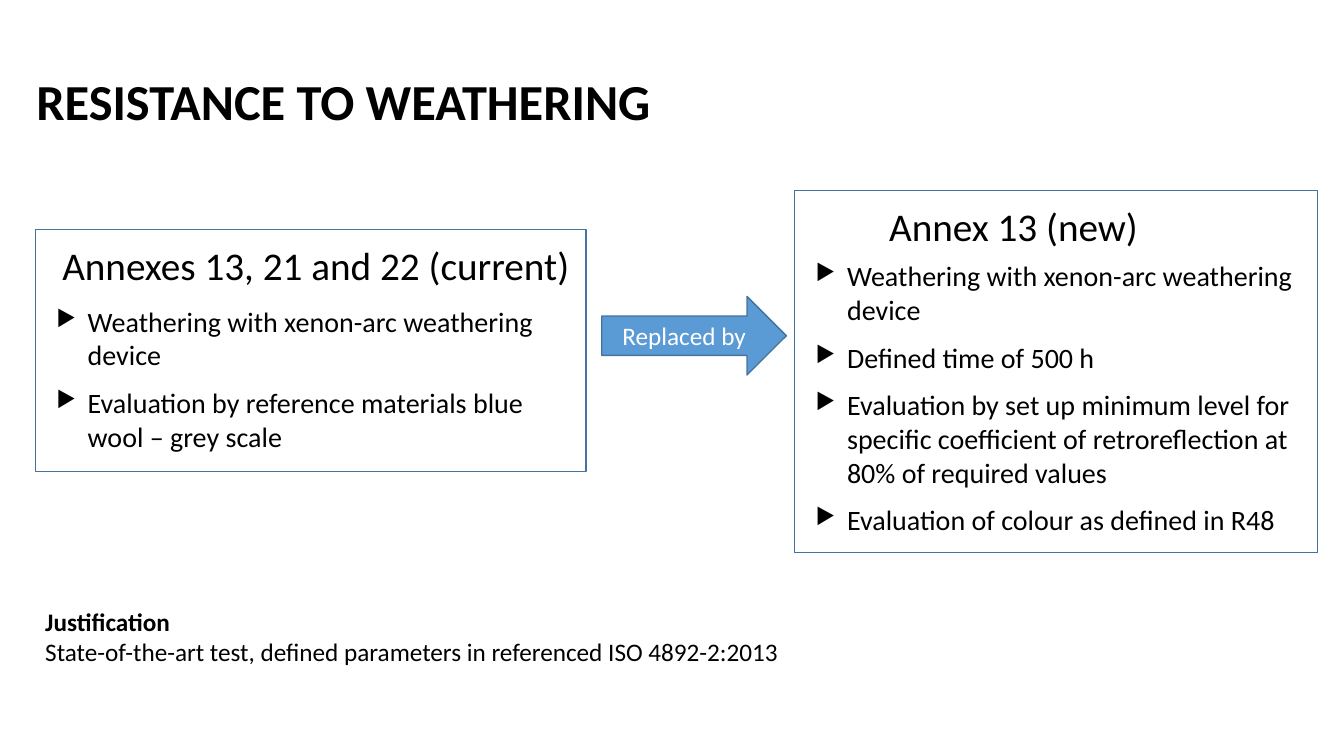
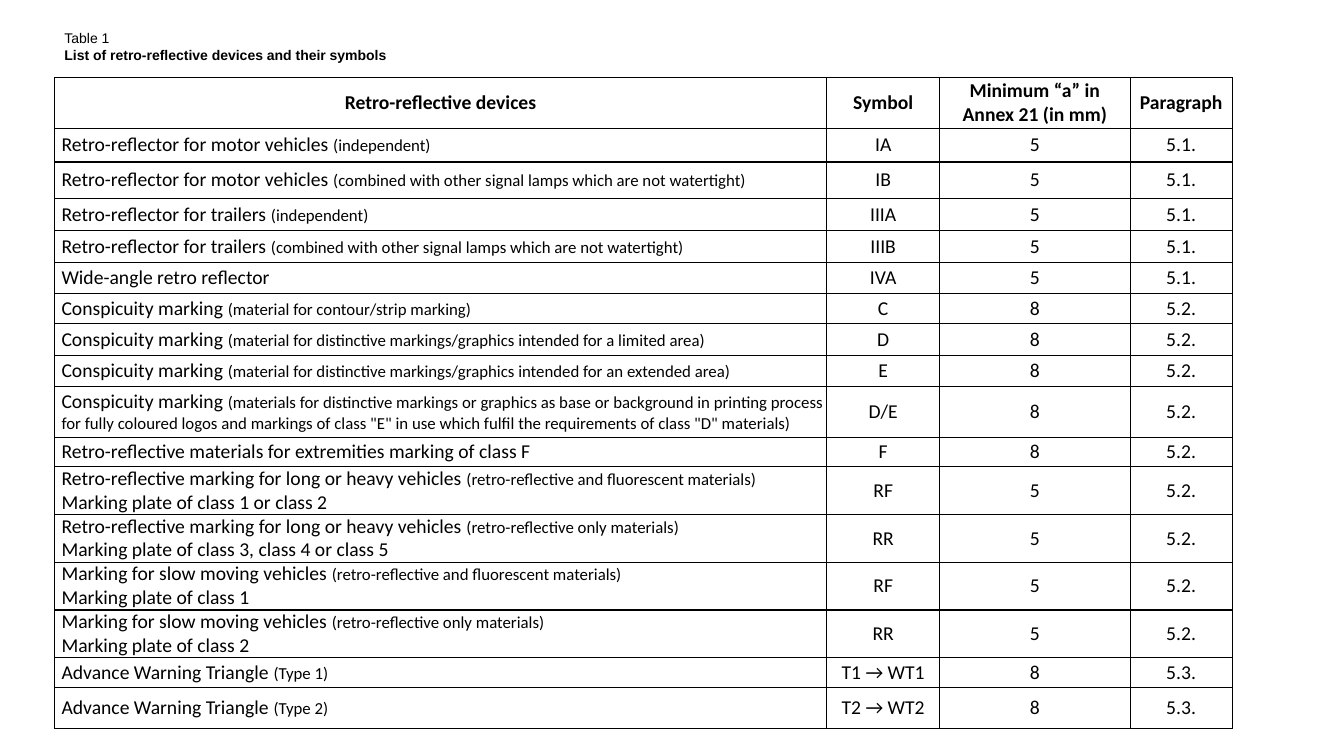
from lxml import etree
from pptx import Presentation
from pptx import util as u
from pptx.dml.color import RGBColor
from pptx.enum import shapes, text
from pptx.oxml import ns

COLORS = {"text": "000000", "light": "FFFFFF", "arrow": "5B9BD5", "outline": "43739E"}
LEFT, CENTER = text.PP_ALIGN.LEFT, text.PP_ALIGN.CENTER
TOP, MIDDLE, BOTTOM = (text.MSO_ANCHOR.TOP, text.MSO_ANCHOR.MIDDLE,
                       text.MSO_ANCHOR.BOTTOM)

HEADERS = ["Retro-reflective devices", "Symbol",
           "Minimum “a” in\nAnnex 21 (in mm)", "Paragraph"]
COLUMN_WIDTHS = [19.46, 2.84, 4.8, 2.57]
HEADER_HEIGHT = 1.27

MOTOR = "Retro-reflector for motor vehicles "
TRAILER = "Retro-reflector for trailers "
CONSPICUITY = "Conspicuity marking "
LONG_HEAVY = "Retro-reflective marking for long or heavy vehicles "
SLOW = "Marking for slow moving vehicles "
TRIANGLE = "Advance Warning Triangle "
LAMPS = "(combined with other signal lamps which are not watertight)"
GRAPHICS = "(material for distinctive markings/graphics intended for "
FLUORESCENT = "(retro-reflective and fluorescent materials)"
ONLY = "(retro-reflective only materials)"
PRINTING = ("(materials for distinctive markings or graphics as base or background in "
            "printing process for fully coloured logos and markings of class \"E\" in use "
            "which fulfil the requirements of class \"D\" materials)")

# Row height, device, small note, second line, symbol, minimum, paragraph
DEVICES = [
    (0.85, MOTOR, "(independent)", "", "IA", "5", "5.1."),
    (0.92, MOTOR, LAMPS, "", "IB", "5", "5.1."),
    (0.8, TRAILER, "(independent)", "", "IIIA", "5", "5.1."),
    (0.82, TRAILER, LAMPS, "", "IIIB", "5", "5.1."),
    (0.78, "Wide-angle retro reflector", "", "", "IVA", "5", "5.1."),
    (0.76, CONSPICUITY, "(material for contour/strip marking)", "", "C", "8", "5.2."),
    (0.79, CONSPICUITY, GRAPHICS + "a limited area)", "", "D", "8", "5.2."),
    (0.78, CONSPICUITY, GRAPHICS + "an extended area)", "", "E", "8", "5.2."),
    (1.29, CONSPICUITY, PRINTING, "", "D/E", "8", "5.2."),
    (0.74, "Retro-reflective materials for extremities marking of class F", "", "",
     "F", "8", "5.2."),
    (1.19, LONG_HEAVY, FLUORESCENT, "Marking plate of class 1 or class 2",
     "RF", "5", "5.2."),
    (1.19, LONG_HEAVY, ONLY, "Marking plate of class 3, class 4 or class 5",
     "RR", "5", "5.2."),
    (1.19, SLOW, FLUORESCENT, "Marking plate of class 1", "RF", "5", "5.2."),
    (1.19, SLOW, ONLY, "Marking plate of class 2", "RR", "5", "5.2."),
    (0.76, TRIANGLE, "(Type 1)", "", "T1 → WT1", "8", "5.3."),
    (1.02, TRIANGLE, "(Type 2)", "", "T2 → WT2", "8", "5.3."),
]


def color(name):
    return RGBColor.from_string(COLORS[name])


def cm(*lengths):
    return [u.Cm(length) for length in lengths]


def add_bullet(para):
    """Give the paragraph a triangle bullet with a hanging indent."""
    props = para._p.get_or_add_pPr()
    props.set("marL", str(u.Cm(0.79)))
    props.set("indent", str(-u.Cm(0.79)))
    tint = etree.SubElement(props, ns.qn("a:buClr"))
    etree.SubElement(tint, ns.qn("a:srgbClr"), val=COLORS["text"])
    etree.SubElement(props, ns.qn("a:buSzPct"), val="80000")
    etree.SubElement(props, ns.qn("a:buChar"), char="▶")


def add_borders(cell):
    props = cell._tc.get_or_add_tcPr()
    for place, side in enumerate(("lnL", "lnR", "lnT", "lnB")):
        line = etree.Element(ns.qn("a:" + side), w=str(u.Pt(1)))
        fill = etree.SubElement(line, ns.qn("a:solidFill"))
        etree.SubElement(fill, ns.qn("a:srgbClr"), val=COLORS["text"])
        props.insert(place, line)


class Deck:
    def __init__(self):
        self.deck = Presentation()
        self.deck.slide_width, self.deck.slide_height = u.Inches(13.33), u.Inches(7.5)
        self.slide = None

    def new_slide(self):
        self.slide = self.deck.slides.add_slide(self.deck.slide_layouts[5])

    def add_spans(self, para, spans, font="Calibri", tint="text", align=LEFT):
        """Add (words, size, bold) spans; a newline in the words is a line break."""
        para.alignment = align
        for words, size, bold in spans:
            for number, line in enumerate(words.split("\n")):
                if number:
                    para.add_line_break()
                if line:
                    span = para.add_run()
                    span.text = line
                    span.font.name, span.font.size = font, u.Pt(size)
                    span.font.bold = bold
                    span.font.color.rgb = color(tint)

    def fill_frame(self, frame, paragraphs, anchor=TOP, bullets=False, **style):
        frame.word_wrap = True
        frame.auto_size = text.MSO_AUTO_SIZE.NONE
        frame.vertical_anchor = anchor
        for number, spans in enumerate(paragraphs):
            para = frame.add_paragraph() if number else frame.paragraphs[0]
            if bullets:
                add_bullet(para)
                para.space_before = u.Pt(4 if number else 0)
                para.space_after = u.Pt(6)
            self.add_spans(para, spans, **style)

    def title(self, place, paragraphs, **style):
        box = self.slide.shapes.title
        box.left, box.top, box.width, box.height = cm(*place)
        self.fill_frame(box.text_frame, paragraphs, **style)

    def text_box(self, place, paragraphs, **style):
        box = self.slide.shapes.add_textbox(*cm(*place))
        self.fill_frame(box.text_frame, paragraphs, **style)

    def shape(self, kind, place, fill=None):
        shape = self.slide.shapes.add_shape(kind, *cm(*place))
        shape.shadow.inherit = False
        if fill:
            shape.fill.solid()
            shape.fill.fore_color.rgb = color(fill)
        else:
            shape.fill.background()
        shape.line.color.rgb = color("outline")
        shape.line.width = u.Pt(1)
        return shape

    def arrow(self, place, words):
        shape = self.shape(shapes.MSO_SHAPE.RIGHT_ARROW, place, "arrow")
        self.fill_frame(shape.text_frame, [[(words, 18, False)]], anchor=MIDDLE,
                        tint="light", align=CENTER)

    def panel(self, place, heading, heading_indent, list_drop, items):
        """Outlined box with a heading and a bullet list below it."""
        left, top, width, height = place
        self.shape(shapes.MSO_SHAPE.RECTANGLE, place)
        self.text_box((left + heading_indent, top, width - heading_indent, 1.6),
                      [[(heading, 28, False)]], anchor=BOTTOM)
        self.text_box((left + 0.28, top + list_drop, width - 0.15, height - list_drop),
                      [[(item, 20, False)] for item in items], bullets=True)

    def cell(self, cell, spans, align=CENTER, indent=0):
        cell.margin_left = u.Cm(indent)
        cell.margin_right = cell.margin_top = cell.margin_bottom = 0
        cell.vertical_anchor = MIDDLE
        cell.fill.background()
        add_borders(cell)
        self.add_spans(cell.text_frame.paragraphs[0], spans, align=align)

    def device_table(self, left, top):
        heights = [HEADER_HEIGHT] + [device[0] for device in DEVICES]
        table = self.slide.shapes.add_table(
            len(heights), len(HEADERS),
            *cm(left, top, sum(COLUMN_WIDTHS), sum(heights))).table
        table.first_row = table.horz_banding = False
        for column, width in zip(table.columns, COLUMN_WIDTHS):
            column.width = u.Cm(width)
        for row, height in zip(table.rows, heights):
            row.height = u.Cm(height)
        for column, header in enumerate(HEADERS):
            self.cell(table.cell(0, column), [(header, 14, True)])
        for row, (_, device, note, second, *values) in enumerate(DEVICES, 1):
            spans = [(device, 14, False), (note, 12, False)]
            if second:
                spans.append(("\n" + second, 14, False))
            self.cell(table.cell(row, 0), spans, align=LEFT, indent=0.18)
            for column, value in enumerate(values, 1):
                self.cell(table.cell(row, column), [(value, 14, False)])


def weathering_slide(deck):
    deck.new_slide()
    deck.title((0.66, 0.43, 23.7, 4.19), [[("RESISTANCE TO WEATHERING", 36, True)]],
               anchor=MIDDLE)
    xenon = "Weathering with xenon-arc weathering device"
    deck.panel((0.89, 5.79, 13.87, 6.1), "Annexes 13, 21 and 22 (current)", 0.43, 1.75,
               [xenon, "Evaluation by reference materials blue wool – grey scale"])
    deck.panel((20.02, 4.8, 13.18, 9.12), "Annex 13 (new)", 2.13, 1.6,
               [xenon, "Defined time of 500 h",
                "Evaluation by set up minimum level for specific coefficient of "
                "retroreflection at 80% of required values",
                "Evaluation of colour as defined in R48"])
    deck.arrow((15.16, 7.47, 4.65, 1.98), "Replaced by")
    deck.text_box((0.89, 15.16, 19.41, 1.8), [
        [("Justification", 18, True)],
        [("State-of-the-art test, defined parameters in referenced ISO 4892-2:2013",
          18, False)]])


def devices_slide(deck):
    deck.new_slide()
    deck.title((1.37, 0.62, 11.05, 1.2), [
        [("Table 1", 10, False)],
        [("List of retro-reflective devices and their symbols", 10, True)]],
        font="Arial")
    deck.device_table(1.37, 1.96)


def main():
    deck = Deck()
    weathering_slide(deck)
    devices_slide(deck)
    deck.deck.save("out.pptx")


if __name__ == "__main__":
    main()
